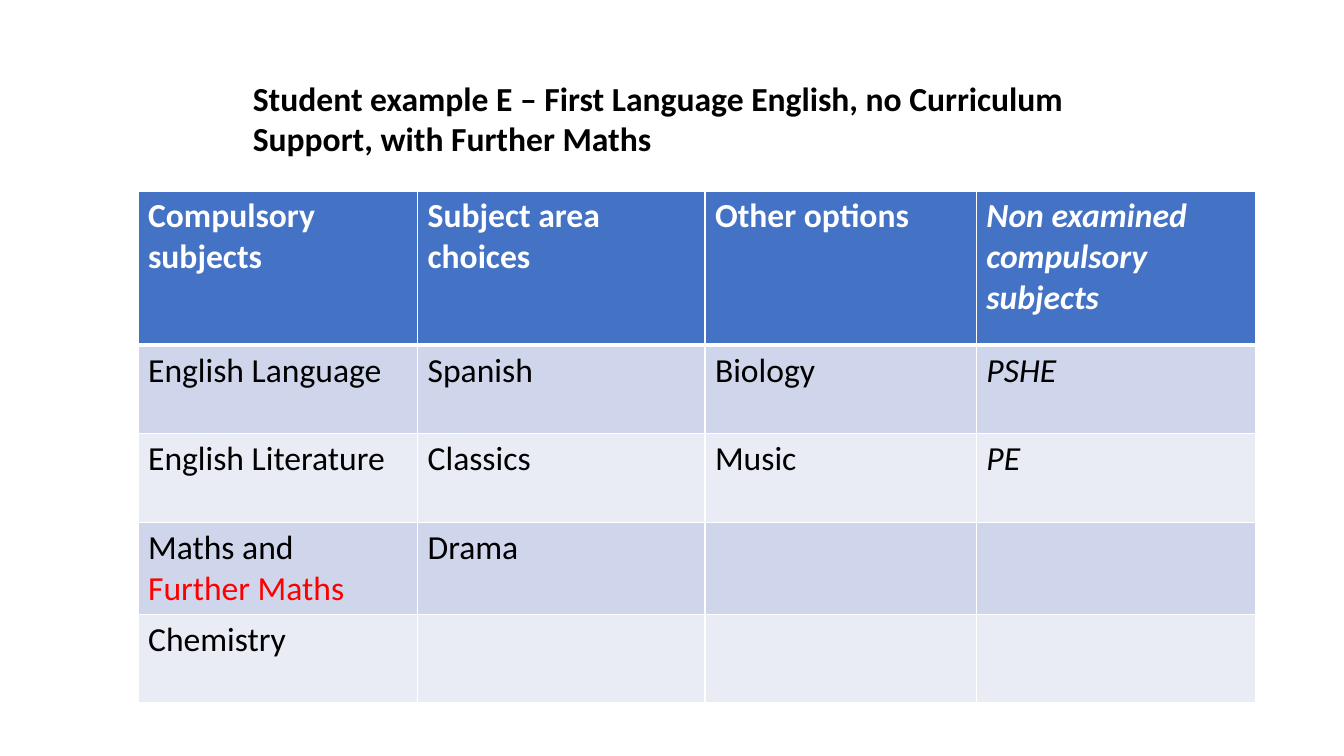
from dataclasses import dataclass

from lxml.etree import SubElement
from pptx import Presentation
from pptx.dml.color import RGBColor
from pptx.oxml.ns import qn
from pptx.util import Pt

WHITE = RGBColor(0xFF, 0xFF, 0xFF)
BLACK = RGBColor(0x00, 0x00, 0x00)
RED = RGBColor(0xFF, 0x00, 0x00)
HEADER_BLUE = RGBColor(0x44, 0x72, 0xC4)
BAND_DARK = RGBColor(0xCF, 0xD5, 0xEA)
BAND_LIGHT = RGBColor(0xE9, 0xEB, 0xF5)


@dataclass
class Column:
    heading: str
    width: float
    subjects: list[str]
    italic: bool = False


COLUMNS = [
    Column("Compulsory subjects", 199.7,
           ["English Language", "English Literature", "Maths and\nFurther Maths", "Chemistry"]),
    Column("Subject area choices", 205.3, ["Spanish", "Classics", "Drama"]),
    Column("Other options", 193.9, ["Biology", "Music"]),
    Column("Non examined compulsory subjects", 199.5, ["PSHE", "PE"], italic=True),
]
ROW_HEIGHTS = [110.2] + [63.2] * 4
HIGHLIGHTED = "Further Maths"


def write(tf, text: str, color: RGBColor, bold: bool = False, italic: bool = False) -> None:
    """Write one paragraph per line of text."""
    for i, line in enumerate(text.split("\n")):
        p = tf.add_paragraph() if i else tf.paragraphs[0]
        r = p.add_run()
        r.text = line
        font_format = {"name": "Calibri", "size": Pt(24), "bold": bold, "italic": italic}
        for name, value in font_format.items():
            setattr(r.font, name, value)
        r.font.color.rgb = RED if line == HIGHLIGHTED else color


def add_borders(cell, widths: dict[str, float]) -> None:
    """Draw white cell borders; call before the fill is set."""
    tc_pr = cell._tc.get_or_add_tcPr()
    for side, width in widths.items():
        ln = SubElement(tc_pr, qn(f"a:ln{side}"), w=str(Pt(width)))
        fill = SubElement(ln, qn("a:solidFill"))
        SubElement(fill, qn("a:srgbClr"), val=str(WHITE))


def add_title(s) -> None:
    sp = s.shapes.add_textbox(Pt(173.5), Pt(51.8), Pt(603.4), Pt(65.5))
    tf = sp.text_frame
    tf.word_wrap = True
    write(tf, "Student example E – First Language English, no Curriculum Support, "
              "with Further Maths", BLACK, bold=True)


def add_subject_table(s) -> None:
    width = sum(column.width for column in COLUMNS)
    table = s.shapes.add_table(len(ROW_HEIGHTS), len(COLUMNS), Pt(98.6), Pt(136.4),
                               Pt(width), Pt(sum(ROW_HEIGHTS))).table
    for row, height in zip(table.rows, ROW_HEIGHTS):
        row.height = Pt(height)

    for c, column in enumerate(COLUMNS):
        table.columns[c].width = Pt(column.width)
        texts = [column.heading, *column.subjects]
        for r in range(len(ROW_HEIGHTS)):
            cell = table.cell(r, c)
            is_header = r == 0
            # A thicker line separates the header from the body
            add_borders(cell, {"L": 1, "R": 1, "T": 3 if r == 1 else 1,
                               "B": 3 if is_header else 1})
            cell.fill.solid()
            band = BAND_DARK if r % 2 else BAND_LIGHT
            cell.fill.fore_color.rgb = HEADER_BLUE if is_header else band
            if r < len(texts):
                write(cell.text_frame, texts[r], WHITE if is_header else BLACK,
                      bold=is_header, italic=column.italic)


def main() -> None:
    prs = Presentation()
    prs.slide_width, prs.slide_height = Pt(960), Pt(540)
    s = prs.slides.add_slide(prs.slide_layouts[6])
    add_subject_table(s)
    add_title(s)
    prs.save("out.pptx")


if __name__ == "__main__":
    main()
